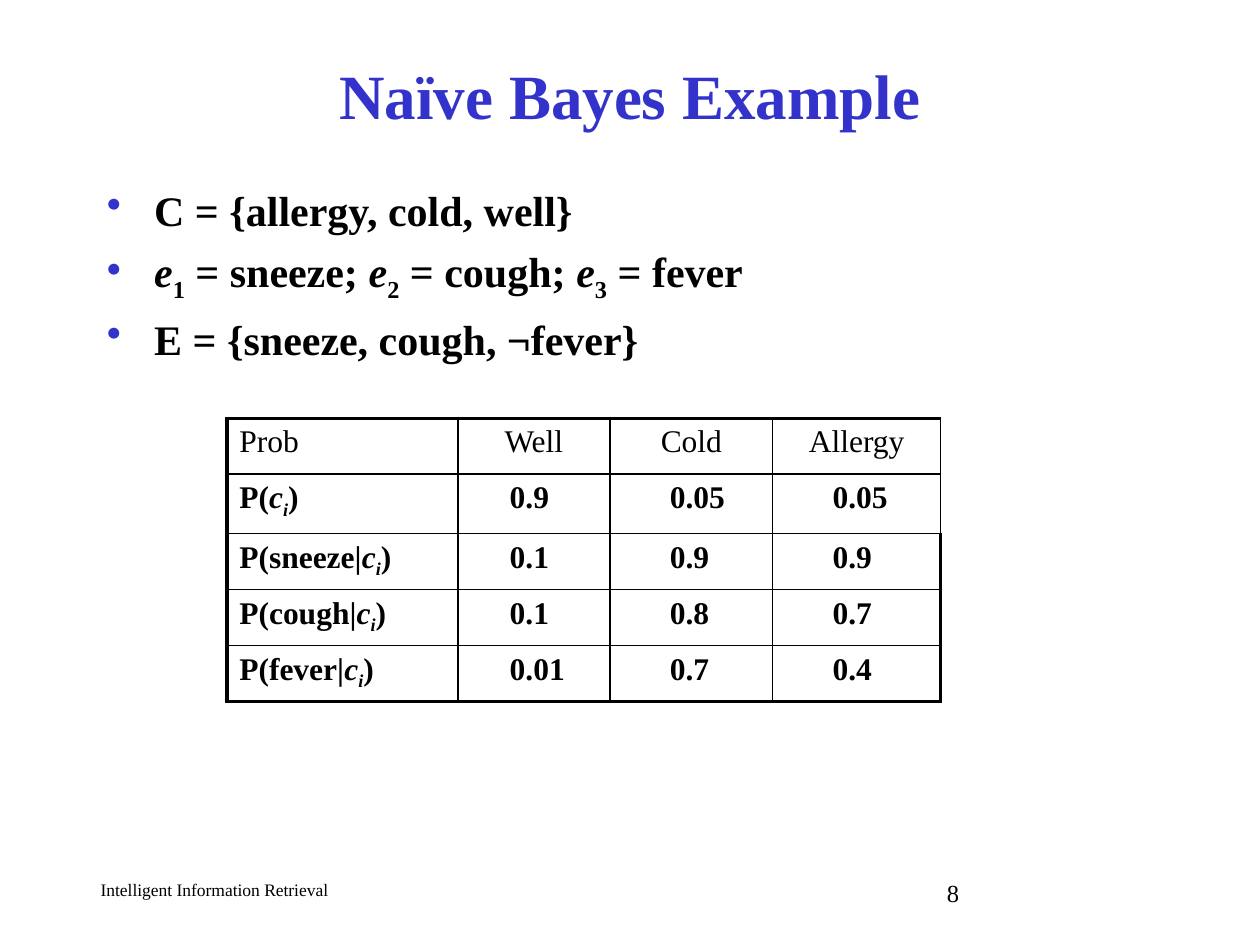
from pptx import Presentation
from pptx.dml.color import RGBColor
from pptx.enum.text import MSO_ANCHOR, PP_ALIGN
from pptx.oxml import parse_xml
from pptx.oxml.ns import nsdecls
from pptx.util import Pt

LEFT, CENTER = PP_ALIGN.LEFT, PP_ALIGN.CENTER
MIDDLE, TOP = MSO_ANCHOR.MIDDLE, MSO_ANCHOR.TOP
BLUE, BLACK = "3333CC", "000000"
THIN, THICK = 1, 2.25


def write(para, text, size=18, color=BLACK, bold=False, align=LEFT, before=0):
    """Fill a paragraph; "/" parts runs, a leading * is italic, _ is subscript."""
    para.alignment = align
    para.space_before = Pt(before)
    for part in text.split("/"):
        run = para.add_run()
        run.text = part.lstrip("*_")
        font = run.font
        font.name, font.size, font.bold = "Times New Roman", Pt(size), bold
        font.italic = part.startswith("*")
        font.color.rgb = RGBColor.from_string(color)
        if part.startswith(("_", "*_")):
            font._element.set("baseline", "-25000")


def border(cell, widths):
    """Draw the left, right, top and bottom edges of a cell."""
    props = cell._tc.get_or_add_tcPr()
    for n, (side, width) in enumerate(zip("LRTB", widths)):
        props.insert(n, parse_xml(
            f'<a:ln{side} {nsdecls("a")} w="{Pt(width)}"><a:solidFill>'
            f'<a:srgbClr val="{BLACK}"/></a:solidFill></a:ln{side}>'))


deck = Presentation()
deck.slide_width, deck.slide_height = Pt(720), Pt(540)
slide = deck.slides.add_slide(deck.slide_layouts[5])

# Title
title = slide.shapes.title
title.left, title.top, title.width, title.height = Pt(54), Pt(24), Pt(612), Pt(60)
title.text_frame.vertical_anchor = MIDDLE
write(title.text_frame.paragraphs[0], "Naïve Bayes Example", size=36,
      color=BLUE, bold=True, align=CENTER)

# Bullets
body = slide.shapes.add_textbox(Pt(54), Pt(102), Pt(612), Pt(384)).text_frame
body.word_wrap = True
points = ["C = {allergy, cold, well}",
          "*e/_1/ = sneeze; /*e/_2/ = cough; /*e/_3/ = fever",
          "E = {sneeze, cough, ¬fever}"]
for n, point in enumerate(points):
    para = body.add_paragraph() if n else body.paragraphs[0]
    write(para, point, size=24, bold=True, before=6 if n else 2)
    props = para._p.get_or_add_pPr()
    props.set("marL", str(Pt(27)))
    props.set("indent", str(Pt(-27)))
    for tag in (f'<a:buClr {nsdecls("a")}><a:srgbClr val="{BLUE}"/></a:buClr>',
                f'<a:buChar {nsdecls("a")} char="•"/>'):
        props.append(parse_xml(tag))

# Probability table
rows = [["Prob", "Well", "Cold", "Allergy"],
        ["P(/*c/*_i/)", "0.9", "0.05", "0.05"],
        ["P(sneeze|/*c/*_i/)", "0.1", "0.9", "0.9"],
        ["P(cough|/*c/*_i/)", "0.1", "0.8", "0.7"],
        ["P(fever|/*c/*_i/)", "0.01", "0.7", "0.4"]]
wides = [132, 87, 93, 96]
highs = [32, 34, 32, 32, 32]
insets = [7.2, 29.7, 34.2, 34.2]
frame = slide.shapes.add_table(len(rows), len(wides), Pt(129.6), Pt(239),
                               Pt(sum(wides)), Pt(sum(highs)))
table = frame.table
table.first_row = table.horz_banding = False
for col, wide in zip(table.columns, wides):
    col.width = Pt(wide)
for r, (row, high) in enumerate(zip(rows, highs)):
    table.rows[r].height = Pt(high)
    for c, text in enumerate(row):
        cell = table.cell(r, c)
        cell.fill.background()
        cell.vertical_anchor = TOP
        cell.margin_left = Pt(insets[c] if r else 7.2)
        write(cell.text_frame.paragraphs[0], text, bold=r > 0, before=1,
              align=CENTER if r == 0 and c else LEFT)
        heavy = [c == 0, c == 3 and r > 1, r == 0, r == 4]
        border(cell, [THICK if edge else THIN for edge in heavy])

# Footer and page number
for text, size, left, top, width in [
        ("Intelligent Information Retrieval", 10, 50.4, 499, 270),
        ("8", 14, 534, 498.2, 150)]:
    note = slide.shapes.add_textbox(Pt(left), Pt(top), Pt(width), Pt(18)).text_frame
    note.word_wrap = True
    write(note.paragraphs[0], text, size=size)

deck.save("out.pptx")
